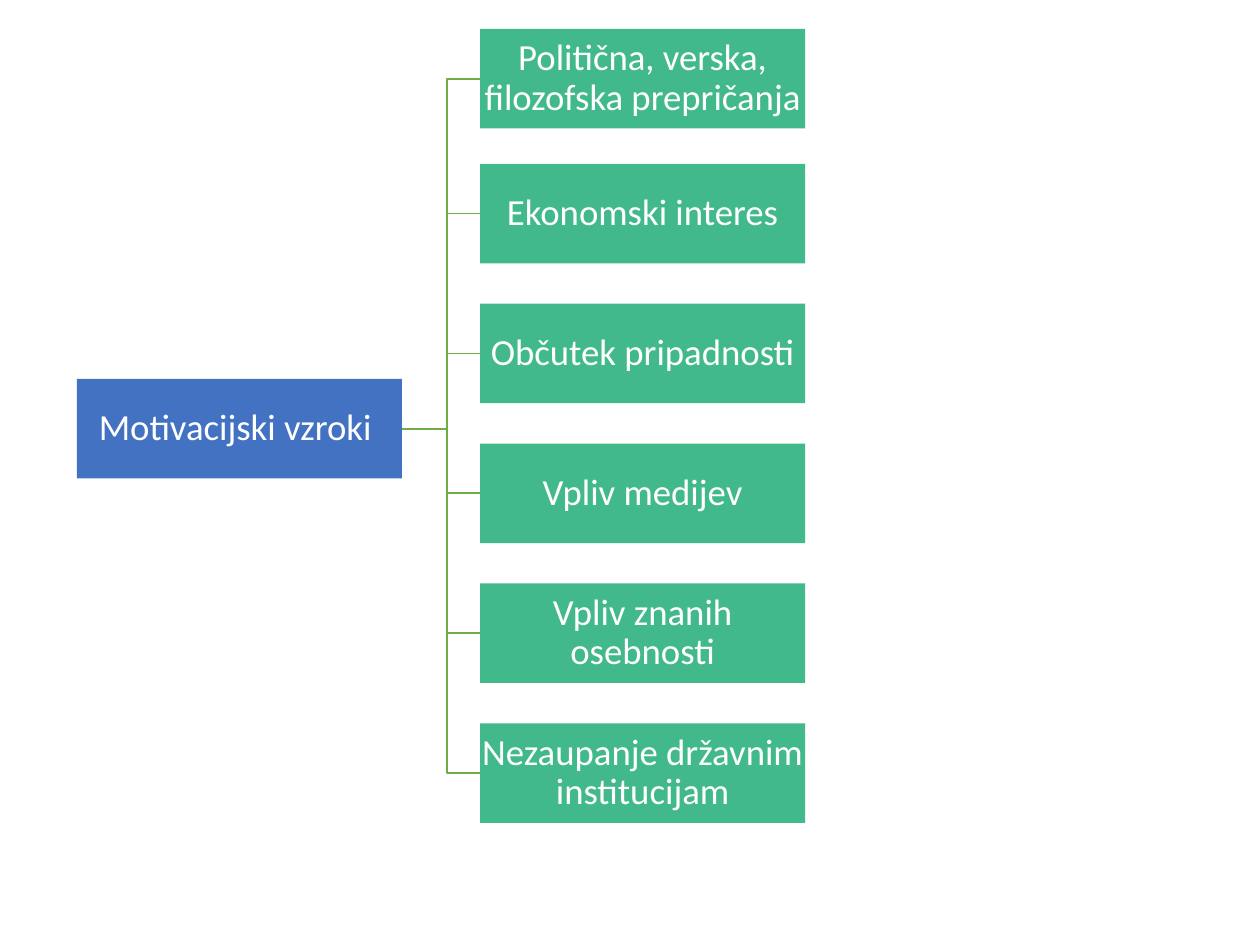
from pptx import Presentation
from pptx.dml.color import RGBColor
from pptx.enum.shapes import MSO_SHAPE
from pptx.enum.text import MSO_ANCHOR, PP_ALIGN
from pptx.util import Pt

BLUE = RGBColor(0x44, 0x72, 0xC3)
TEAL = RGBColor(0x42, 0xB9, 0x8B)
GREEN = RGBColor(0x70, 0xAD, 0x47)
WHITE = RGBColor(0xFF, 0xFF, 0xFF)

BOX_WIDTH, BOX_HEIGHT = 185.76, 56.88
ROOT_LEFT, ROOT_TOP = 43.92, 216.5
CAUSE_LEFT, TRUNK_X = 274.32, 255.6
FIRST_TOP, SECOND_TOP, CAUSE_STEP = 16.56, 93.6, 79.92

CAUSES = [
    "Politična, verska, filozofska prepričanja",
    "Ekonomski interes",
    "Občutek pripadnosti",
    "Vpliv medijev",
    "Vpliv znanih osebnosti",
    "Nezaupanje državnim institucijam",
]

deck = Presentation()
deck.slide_width, deck.slide_height = Pt(720), Pt(540)
page = deck.slides.add_slide(deck.slide_layouts[6])


def add_box(text, left, top, color):
    box = page.shapes.add_shape(
        MSO_SHAPE.RECTANGLE, Pt(left), Pt(top), Pt(BOX_WIDTH), Pt(BOX_HEIGHT)
    )
    box.shadow.inherit = False
    box.fill.solid()
    box.fill.fore_color.rgb = color
    box.line.fill.background()
    frame = box.text_frame
    frame.word_wrap = True
    frame.vertical_anchor = MSO_ANCHOR.MIDDLE
    frame.margin_left = frame.margin_right = Pt(1)
    frame.margin_top = frame.margin_bottom = Pt(1)
    para = frame.paragraphs[0]
    para.text = text
    para.alignment = PP_ALIGN.CENTER
    para.line_spacing = 0.9
    para.font.name = "Calibri"
    para.font.size = Pt(21)
    para.font.color.rgb = WHITE


cause_tops = [FIRST_TOP] + [
    SECOND_TOP + CAUSE_STEP * row for row in range(len(CAUSES) - 1)
]
root_right = Pt(ROOT_LEFT + BOX_WIDTH)
root_middle = Pt(ROOT_TOP + BOX_HEIGHT / 2)

for top in reversed(cause_tops):
    cause_middle = Pt(top + BOX_HEIGHT / 2)
    builder = page.shapes.build_freeform(root_right, root_middle)
    builder.add_line_segments(
        [
            (Pt(TRUNK_X), root_middle),
            (Pt(TRUNK_X), cause_middle),
            (Pt(CAUSE_LEFT), cause_middle),
        ],
        close=False,
    )
    branch = builder.convert_to_shape()
    branch.shadow.inherit = False
    branch.fill.background()
    branch.line.color.rgb = GREEN
    branch.line.width = Pt(1)

add_box("Motivacijski vzroki ", ROOT_LEFT, ROOT_TOP, BLUE)
for cause, top in zip(CAUSES, cause_tops):
    add_box(cause, CAUSE_LEFT, top, TEAL)

deck.save("out.pptx")
